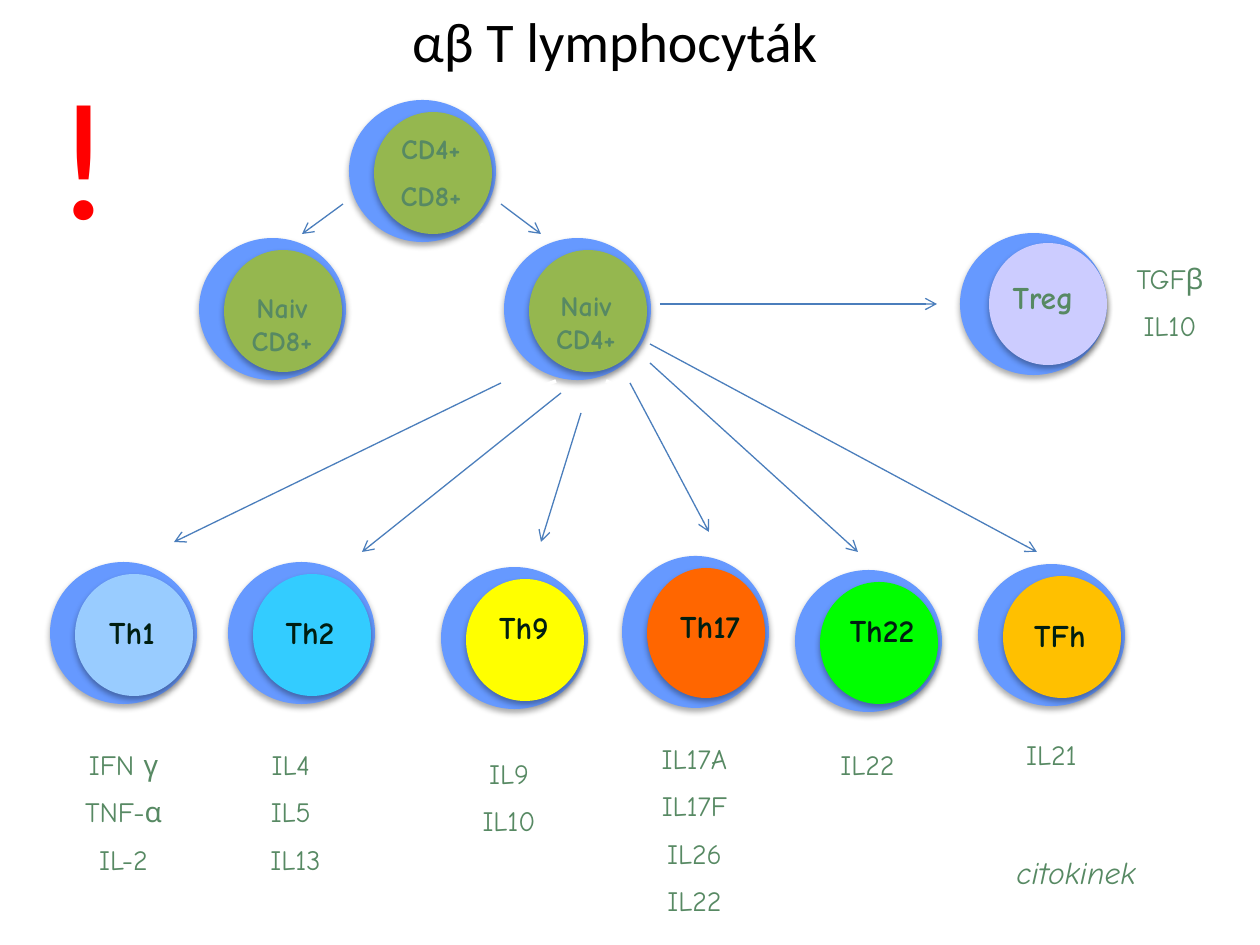
from lxml import etree
from pptx import Presentation, util as u
from pptx.dml.color import RGBColor
from pptx.enum import shapes, text
from pptx.oxml.ns import qn

SCALE = 914400 / 126
HAND = "Comic Neue"
GREEN, DARK, BLUE = "578963", "001E11", "6699FF"
LEAF = "95B74F"

CELLS = [
    (504, 238, LEAF, ["Naiv CD4+"], (537, 282, 98, 81), GREEN, 16),
    (50, 562, "99CCFF", ["Th1"], (83, 607, 98, 50), DARK, 18),
    (228, 562, "33CCFF", ["Th2"], (261, 607, 98, 50), DARK, 18),
    (795, 570, "00FF00", ["Th22"], (828, 605, 108, 50), DARK, 18),
    (978, 564, "FFC000", ["TFh"], (1011, 610, 98, 50), DARK, 18),
    (441, 567, "FFFF00", ["Th9"], (475, 602, 98, 50), DARK, 18),
    (199, 238, LEAF, ["Naiv CD8+"], (233, 284, 98, 81), GREEN, 16),
    (349, 100, LEAF, ["CD4+", "CD8+"], (382, 125, 98, 97), GREEN, 16),
]
CYTOKINES = [
    (["IFN γ", "TNF-α", "IL-2"], (55, 741, 137, 147)),
    (["IL4 ", "IL5 ", "IL13"], (222, 741, 147, 147)),
    (["IL9", "IL10"], (430, 750, 158, 97)),
    (["IL17A", "IL17F", "IL26", "IL22"], (626, 735, 137, 198)),
    (["IL22"], (759, 741, 217, 47)),
    (["IL21"], (978, 731, 147, 47)),
    (["TGFβ", "IL10"], (1116, 255, 108, 97)),
]
WHITE_ARROWS = [
    (556, 381, 134, 538), (606, 381, 999, 548), (576, 391, 320, 538),
    (596, 391, 803, 538), (576, 401, 507, 529), (596, 401, 664, 529),
    (674, 312, 891, 312), (481, 224, 514, 253), (353, 224, 323, 256),
]
BLUE_ARROWS = [
    (343, 204, 302, 234), (501, 204, 541, 234), (660, 304, 937, 304),
    (501, 383, 174, 542), (561, 393, 362, 552), (581, 413, 541, 542),
    (630, 383, 709, 532), (650, 363, 858, 552), (650, 344, 1037, 552),
]


def px(num):
    return u.Emu(round(num * SCALE))


def hue(code):
    return RGBColor.from_string(code)


def write(frame, lines, size, color, font=HAND, align=text.PP_ALIGN.CENTER,
          bold=False, slant=False, wrap=True):
    frame.word_wrap = wrap
    frame.auto_size = text.MSO_AUTO_SIZE.SHAPE_TO_FIT_TEXT
    frame.vertical_anchor = text.MSO_ANCHOR.TOP
    for i, line in enumerate(lines):
        para = frame.add_paragraph() if i else frame.paragraphs[0]
        para.alignment = align
        para.space_before = u.Pt(size / 2 if i else 0)
        run = para.add_run()
        run.text = line
        run.font.name = font
        run.font.size = u.Pt(size)
        run.font.bold = bold
        run.font.italic = slant
        run.font.color.rgb = hue(color)


def label(slide, lines, box, size, color, **style):
    item = slide.shapes.add_textbox(*map(px, box))
    write(item.text_frame, lines, size, color, **style)


def disc(slide, box, fill):
    item = slide.shapes.add_shape(shapes.MSO_SHAPE.OVAL, *map(px, box))
    item.fill.solid()
    item.fill.fore_color.rgb = hue(fill)
    item.line.fill.background()
    item.shadow.inherit = False
    glow = item._element.spPr.find(qn("a:effectLst"))
    shade = etree.SubElement(glow, qn("a:outerShdw"), blurRad=str(u.Pt(3.5)),
                             dist=str(u.Pt(2.2)), dir="5400000", rotWithShape="0")
    tint = etree.SubElement(shade, qn("a:srgbClr"), val="000000")
    etree.SubElement(tint, qn("a:alpha"), val="32000")


def cell(slide, x, y, fill, lines, box, color, size,
         high=142, core=122, shift=(25, 12)):
    disc(slide, (x, y, 147, high), BLUE)
    disc(slide, (x + shift[0], y + shift[1], 118, core), fill)
    label(slide, lines, box, size, color, bold=True)


def arrow(slide, ends, color, width):
    item = slide.shapes.add_connector(shapes.MSO_CONNECTOR.STRAIGHT, *map(px, ends))
    item.line.color.rgb = hue(color)
    item.line.width = u.Pt(width)
    etree.SubElement(item.line._get_or_add_ln(), qn("a:tailEnd"), type="arrow")
    etree.SubElement(item._element.spPr, qn("a:effectLst"))


def head(slide, line):
    item = slide.shapes.title
    item.left, item.top, item.width, item.height = map(px, (0, 0, 1230, 81))
    write(item.text_frame, [line], 32, "000000", font="Calibri")


def main():
    deck = Presentation()
    deck.slide_width, deck.slide_height = px(1260), px(945)
    slide = deck.slides.add_slide(deck.slide_layouts[5])
    head(slide, "αβ T lymphocyták")
    for item in CELLS:
        cell(slide, *item)
    cell(slide, 622, 556, "FF6600", ["Th17"], (656, 601, 108, 50), DARK, 18,
         high=152, core=130)
    cell(slide, 960, 233, "CCCCFF", ["Treg"], (989, 272, 108, 50), GREEN, 18,
         shift=(29, 10))
    for ends in WHITE_ARROWS:
        arrow(slide, ends, "FFFFFF", 2)
    for lines, box in CYTOKINES:
        label(slide, lines, box, 16, GREEN)
    for ends in BLUE_ARROWS:
        arrow(slide, ends, "4B7EBC", 0.75)
    left = text.PP_ALIGN.LEFT
    label(slide, ["citokinek"], (1004, 847, 204, 64), 18, GREEN,
          align=left, slant=True, wrap=False)
    label(slide, ["!"], (44, 45, 118, 217), 96, "FF0000", font="Calibri", align=left)
    deck.save("out.pptx")


if __name__ == "__main__":
    main()
